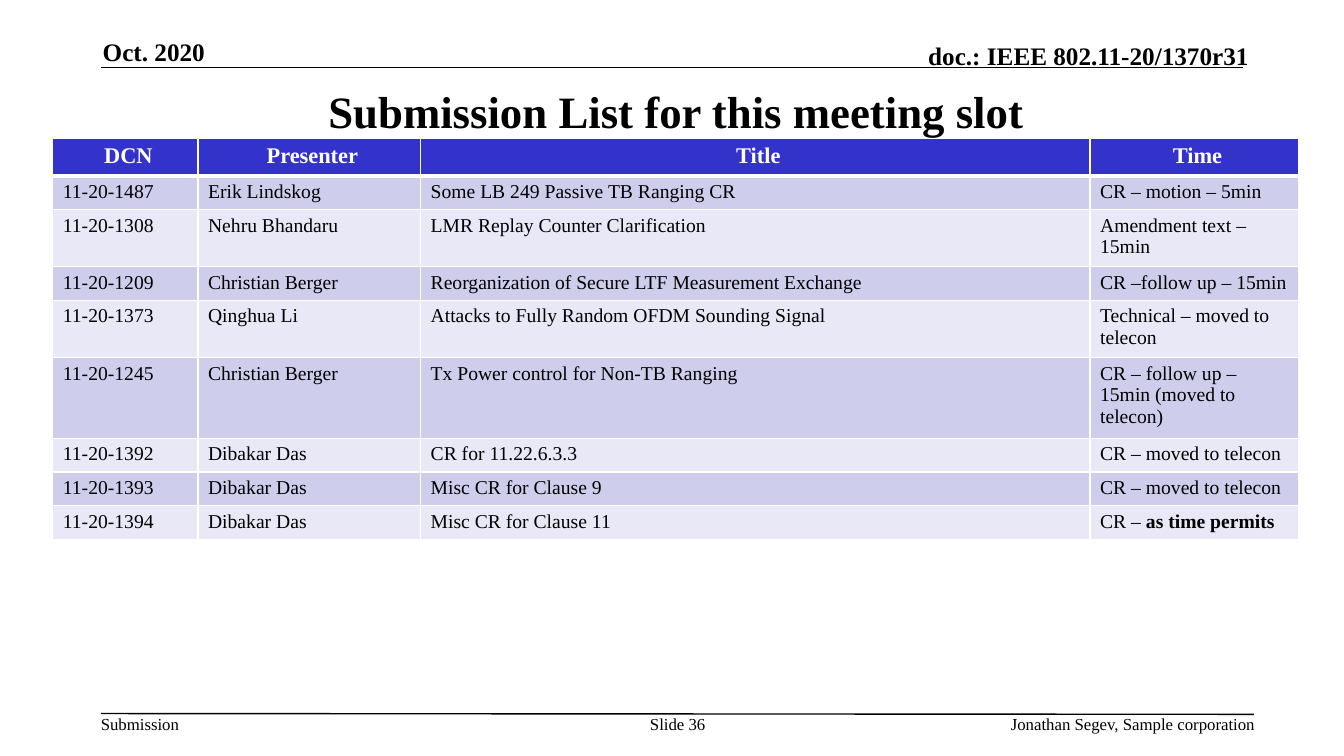
from lxml import etree
from pptx import Presentation
from pptx.dml import color
from pptx.enum import shapes, text
from pptx.oxml import ns
from pptx.util import Cm, Pt

FONT = "Times New Roman"
BLACK, WHITE, HEADER_BLUE = "000000", "FFFFFF", "3333CC"
BANDS = ("CECEEC", "E8E8F6")
LEFT, CENTER, RIGHT = text.PP_ALIGN.LEFT, text.PP_ALIGN.CENTER, text.PP_ALIGN.RIGHT
TOP, MIDDLE, BOTTOM = text.MSO_ANCHOR.TOP, text.MSO_ANCHOR.MIDDLE, text.MSO_ANCHOR.BOTTOM

HEADINGS = ("DCN", "Presenter", "Title", "Time")
COLUMN_WIDTHS = (3.66, 5.61, 16.87, 5.26)
SUBMISSIONS = (
    ("11-20-1487", "Erik Lindskog", "Some LB 249 Passive TB Ranging CR", "CR – motion – 5min"),
    ("11-20-1308", "Nehru Bhandaru", "LMR Replay Counter Clarification", "Amendment text – 15min"),
    ("11-20-1209", "Christian Berger", "Reorganization of Secure LTF Measurement Exchange",
     "CR –follow up – 15min"),
    ("11-20-1373", "Qinghua Li", "Attacks to Fully Random OFDM Sounding Signal",
     "Technical – moved to telecon"),
    ("11-20-1245", "Christian Berger", "Tx Power control for Non-TB Ranging",
     "CR – follow up – 15min (moved to telecon)"),
    ("11-20-1392", "Dibakar Das", "CR for 11.22.6.3.3", "CR – moved to telecon"),
    ("11-20-1393", "Dibakar Das", "Misc CR for Clause 9", "CR – moved to telecon"),
    ("11-20-1394", "Dibakar Das", "Misc CR for Clause 11", "CR –"),
)
TIME_LINES = (1, 2, 1, 2, 3, 1, 1, 1)


def rgb(value):
    """Return the colour for a hex string."""
    return color.RGBColor.from_string(value)


def format_run(run, size, bold=False, ink=BLACK):
    """Set the font of one run."""
    run.font.name = FONT
    run.font.size = Pt(size)
    run.font.bold = bold
    run.font.color.rgb = rgb(ink)


def add_label(slide, words, box, size, align=LEFT, anchor=TOP, bold=False, wrap=True):
    """Add a text box without insets."""
    frame = slide.shapes.add_textbox(*map(Cm, box)).text_frame
    frame.margin_left = frame.margin_right = frame.margin_top = frame.margin_bottom = 0
    frame.word_wrap = wrap
    frame.vertical_anchor = anchor
    frame.text = words
    paragraph = frame.paragraphs[0]
    paragraph.alignment = align
    format_run(paragraph.runs[0], size, bold)


def add_rule(slide, left, top, right, bottom):
    """Add a thin black line without a shadow."""
    line = slide.shapes.add_connector(
        shapes.MSO_CONNECTOR.STRAIGHT, Cm(left), Cm(top), Cm(right), Cm(bottom))
    line.line.color.rgb = rgb(BLACK)
    line.line.width = Pt(1)
    etree.SubElement(line._element.spPr, ns.qn("a:effectLst"))


def set_borders(cell, top=1, bottom=1):
    """Draw white borders around a cell, with widths in points."""
    properties = cell._tc.get_or_add_tcPr()
    widths = {"lnL": 1, "lnR": 1, "lnT": top, "lnB": bottom}
    for position, (side, width) in enumerate(widths.items()):
        border = etree.Element(ns.qn(f"a:{side}"), w=str(Pt(width)))
        fill = etree.SubElement(border, ns.qn("a:solidFill"))
        etree.SubElement(fill, ns.qn("a:srgbClr"), val=WHITE)
        properties.insert(position, border)


def fill_cell(cell, words, background, size, align=LEFT, bold=False, ink=BLACK):
    """Write one table cell and colour it."""
    cell.fill.solid()
    cell.fill.fore_color.rgb = rgb(background)
    cell.text = words
    paragraph = cell.text_frame.paragraphs[0]
    paragraph.alignment = align
    format_run(paragraph.runs[0], size, bold, ink)


def add_submission_table(slide):
    """Add the banded list of submissions."""
    heights = [0.87] + [0.25 + 0.55 * lines for lines in TIME_LINES]
    table = slide.shapes.add_table(
        len(heights), len(HEADINGS), Cm(1.33), Cm(3.5),
        Cm(sum(COLUMN_WIDTHS)), Cm(sum(heights))).table
    for column, width in zip(table.columns, COLUMN_WIDTHS):
        column.width = Cm(width)
    for row, height in zip(table.rows, heights):
        row.height = Cm(height)
    for cell, heading in zip(table.rows[0].cells, HEADINGS):
        fill_cell(cell, heading, HEADER_BLUE, 16, CENTER, True, WHITE)
        cell.margin_right = Cm(0.1)
        set_borders(cell, bottom=3)
    for index, submission in enumerate(SUBMISSIONS):
        for cell, words in zip(table.rows[index + 1].cells, submission):
            fill_cell(cell, words, BANDS[index % 2], 14)
            set_borders(cell, top=1 if index else 3)
    last_time = table.cell(len(SUBMISSIONS), len(HEADINGS) - 1)
    emphasis = last_time.text_frame.paragraphs[0].add_run()
    emphasis.text = " as time permits"
    format_run(emphasis, 14, True)


def main():
    """Build and save the slide."""
    presentation = Presentation()
    presentation.slide_width = Cm(33.87)
    presentation.slide_height = Cm(19.05)
    slide = presentation.slides.add_slide(presentation.slide_layouts[6])
    add_rule(slide, 2.54, 1.7, 31.32, 1.7)
    add_rule(slide, 2.54, 17.98, 31.6, 18)
    add_label(slide, "Oct. 2020", (2.59, 0.92, 6.93, 0.77), 18, LEFT, BOTTOM, True)
    add_label(slide, "doc.: IEEE 802.11-20/1370r31", (18.52, 1, 12.95, 0.77),
              18, RIGHT, BOTTOM, True)
    add_label(slide, "Submission List for this meeting slot", (2.54, 1.97, 29, 1.63),
              32, CENTER, MIDDLE, True)
    add_submission_table(slide)
    add_label(slide, "Submission", (2.54, 17.98, 2, 0.51), 12, wrap=False)
    add_label(slide, "Slide 36", (16.1, 17.98, 1.96, 1), 12, CENTER)
    add_label(slide, "Jonathan Segev, Sample corporation", (19.84, 17.98, 11.79, 0.51),
              12, RIGHT)
    presentation.save("out.pptx")


if __name__ == "__main__":
    main()
